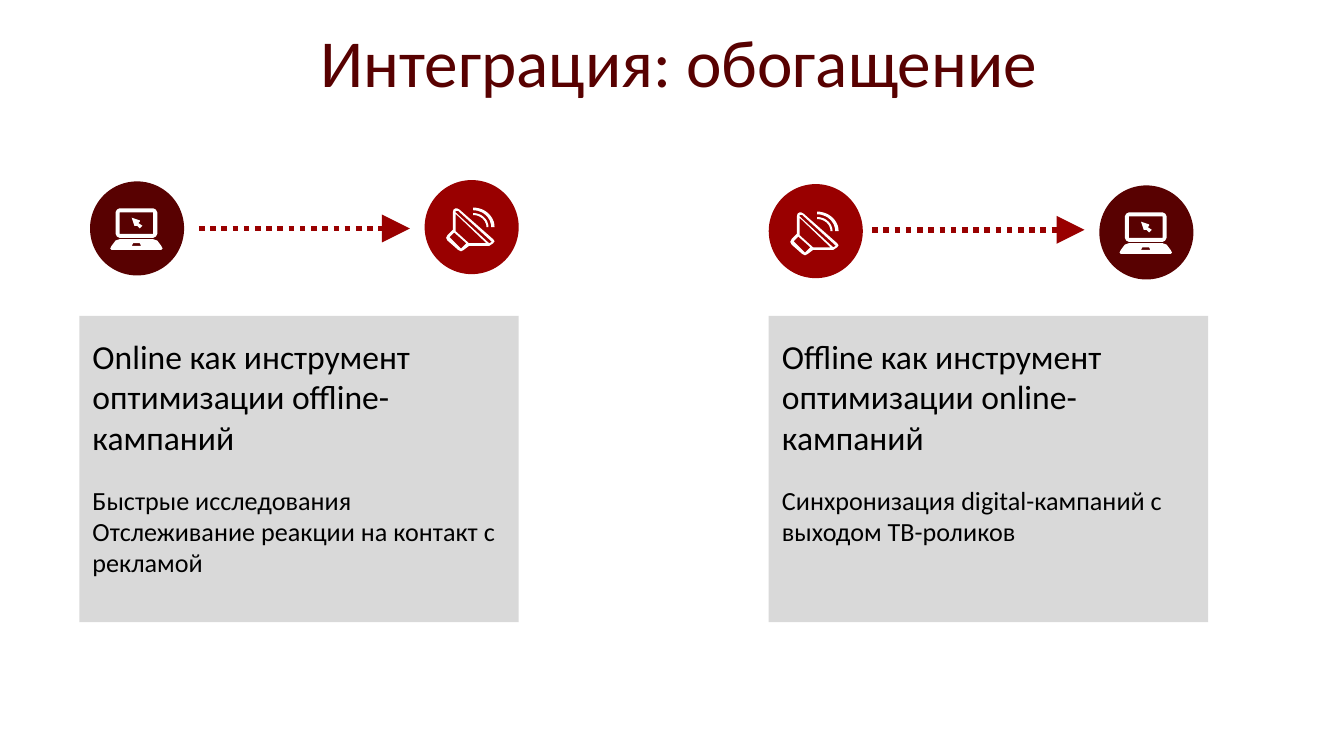
from math import cos, pi, sin

from lxml.etree import SubElement
from pptx import Presentation
from pptx.dml.color import RGBColor
from pptx.enum.dml import MSO_LINE
from pptx.enum.shapes import MSO_CONNECTOR, MSO_SHAPE as Shape
from pptx.enum.text import MSO_ANCHOR as Anchor, PP_ALIGN as Align
from pptx.oxml.ns import qn
from pptx.util import Inches, Pt

MAROON = RGBColor(0x58, 0x01, 0x01)
RED = RGBColor(0x99, 0x00, 0x00)
GREY = RGBColor(0xD9, 0xD9, 0xD9)
WHITE = RGBColor(0xFF, 0xFF, 0xFF)
BLACK = RGBColor(0x00, 0x00, 0x00)

PANEL_WIDTH = 3.27
BADGE_SIZE = 0.7


def arc(rx, ry, steps=12):
    angles = [pi / 2 * step / steps for step in range(steps + 1)]
    return [(36 + rx * sin(a), 35 - ry * cos(a)) for a in angles]


def wave(inner, outer):
    return [arc(*outer) + arc(*inner)[::-1]]


LAPTOP = [[
    [(22, 42), (47, 42), (49, 41), (50, 39), (50, 23), (49, 21), (47, 20),
     (22, 20), (20, 21), (19, 23), (19, 39), (20, 41)],
    [(22, 23), (47, 23), (47, 39), (22, 39)],
    [(53, 48), (50, 44), (47, 43), (22, 43), (19, 44), (16, 48), (15, 50),
     (16, 51), (53, 51), (54, 50)],
    [(38, 48), (31, 48), (32, 46), (37, 46)],
    [(36, 31), (37, 30), (37, 29), (31, 27), (33, 33), (35, 33), (37, 35), (39, 33)],
]]
MEGAPHONE = [
    wave((10, 9), (11.5, 10.5)),
    [
        [(26, 22), (24, 21), (23, 21), (21.5, 22), (21, 24), (21, 37), (17, 41),
         (16, 43), (17, 45), (25, 52), (27, 53), (29, 52), (33, 49), (48, 49),
         (51, 47), (52, 45.5), (51, 44)],
        [(31, 47), (28, 50), (27, 51), (26, 50), (19, 43), (18.5, 42.5), (19, 42), (22, 39)],
        [(33, 47), (23, 38), (23, 25), (46, 47)],
        [(50, 46), (48, 47), (23, 24), (23, 23), (24, 23), (25, 23), (49, 45)],
    ],
    wave((13.5, 12.5), (16, 14.5)),
]


class Deck:
    font = "Calibri"

    def __init__(self):
        self.presentation = Presentation()
        self.presentation.slide_width = Inches(10)
        self.presentation.slide_height = Inches(10) * 9 // 16
        self.slide = self.presentation.slides.add_slide(self.presentation.slide_layouts[6])
        self.shapes = self.slide.shapes

    def paint(self, shape, color):
        shape.shadow.inherit = False
        shape.fill.solid()
        shape.fill.fore_color.rgb = color
        shape.line.fill.background()

    def block(self, kind, left, top, width, height, color):
        self.paint(self.shapes.add_shape(
            kind, Inches(left), Inches(top), Inches(width), Inches(height)), color)

    def badge(self, left, top, color, icon):
        self.block(Shape.OVAL, left, top, BADGE_SIZE, BADGE_SIZE, color)
        for part in icon:
            self.outline(left, top, part)

    def outline(self, left, top, contours):
        scaled = [[(x * 10, y * 10) for x, y in contour] for contour in contours]
        builder = self.shapes.build_freeform(*scaled[0][0], scale=Inches(1) / 1000)
        builder.add_line_segments(scaled[0][1:])
        for contour in scaled[1:]:
            builder.move_to(*contour[0])
            builder.add_line_segments(contour[1:])
        self.paint(builder.convert_to_shape(Inches(left), Inches(top)), WHITE)

    def arrow(self, start, end, y):
        connector = self.shapes.add_connector(
            MSO_CONNECTOR.STRAIGHT, Inches(start), Inches(y), Inches(end), Inches(y))
        connector.line.color.rgb = RED
        connector.line.width = Pt(3)
        connector.line.dash_style = MSO_LINE.ROUND_DOT
        SubElement(connector.line._get_or_add_ln(), qn("a:tailEnd"),
                   type="triangle", w="lg", len="lg")
        SubElement(connector._element.spPr, qn("a:effectLst"))

    def text(self, left, top, width, height, lines, color=BLACK, align=Align.LEFT):
        box = self.shapes.add_textbox(Inches(left), Inches(top), Inches(width), Inches(height))
        frame = box.text_frame
        frame.word_wrap = True
        frame.text = "\n".join(line for line, size, gap in lines)
        for paragraph, (line, size, gap) in zip(frame.paragraphs, lines):
            paragraph.alignment = align
            if gap:
                paragraph.space_before = Pt(gap)
            for run in paragraph.runs:
                run.font.name = self.font
                run.font.size = Pt(size)
                run.font.color.rgb = color
        return frame

    def title(self, wording):
        frame = self.text(0.39, 0.34, 9.32, 0.46, [(wording, 36, 0)], MAROON, Align.CENTER)
        frame.vertical_anchor = Anchor.BOTTOM
        frame.margin_top = 0
        frame.margin_bottom = Inches(0.05)

    def panel(self, left, text_height, heading, details):
        self.block(Shape.RECTANGLE, left, 2.35, PANEL_WIDTH, 2.28, GREY)
        lines = [(heading, 18, 0)]
        lines += [(detail, 14, 0 if index else 14.6) for index, detail in enumerate(details)]
        self.text(left, 2.45, PANEL_WIDTH, text_height, lines)

    def save(self):
        self.presentation.save("out.pptx")


def main():
    deck = Deck()
    deck.title("Интеграция: обогащение")
    deck.panel(0.59, 2.12, "Online как инструмент оптимизации offline-кампаний",
               ["Быстрые исследования", "Отслеживание реакции на контакт с рекламой"])
    deck.panel(5.72, 1.68, "Offline как инструмент оптимизации online-кампаний",
               ["Синхронизация digital-кампаний с выходом ТВ-роликов"])
    deck.badge(0.67, 1.35, MAROON, LAPTOP)
    deck.badge(3.16, 1.34, RED, MEGAPHONE)
    deck.arrow(1.48, 3.05, 1.7)
    deck.badge(8.18, 1.38, MAROON, LAPTOP)
    deck.badge(5.72, 1.37, RED, MEGAPHONE)
    deck.arrow(6.49, 8.07, 1.71)
    deck.save()


if __name__ == "__main__":
    main()
